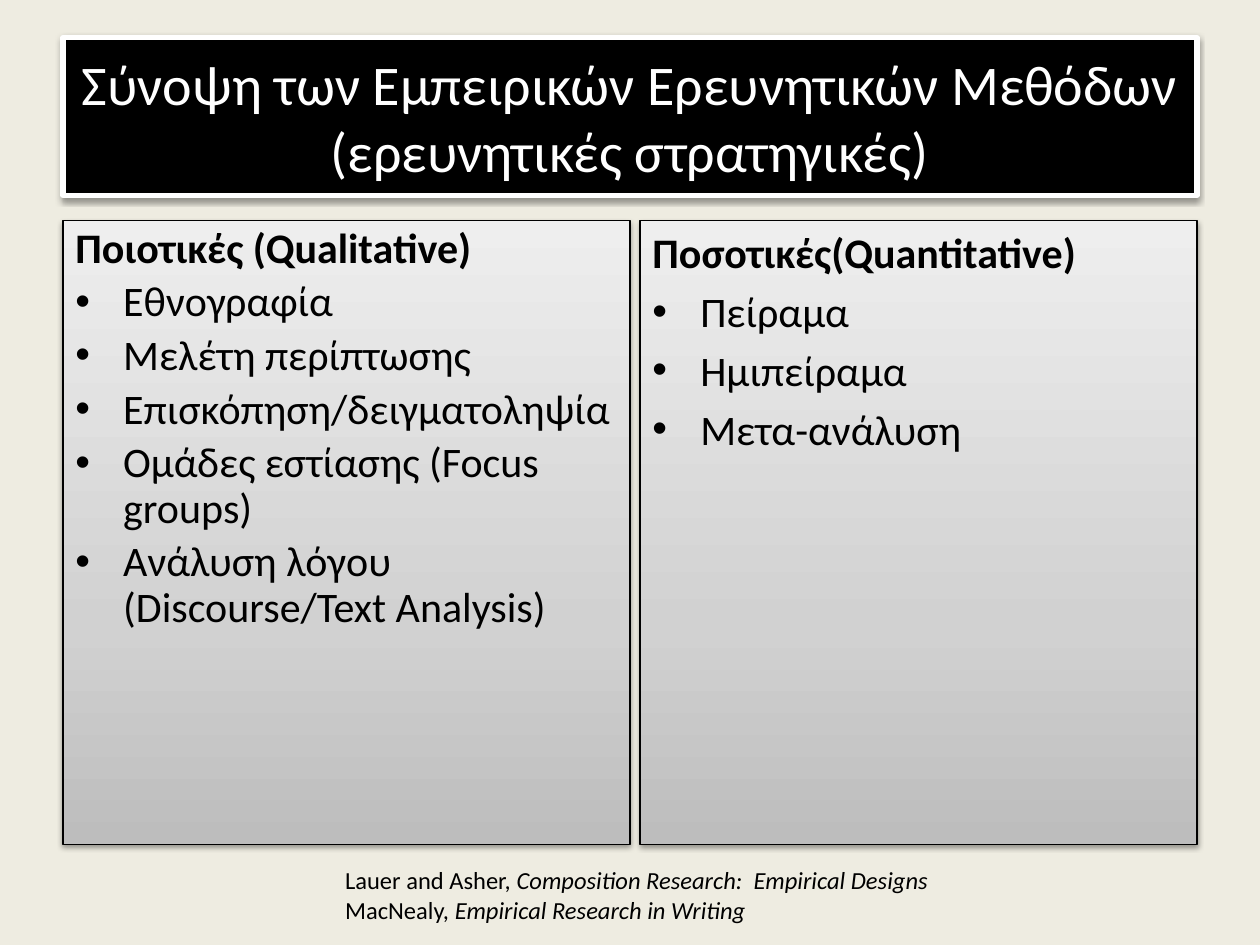
from dataclasses import dataclass
from typing import Optional

from lxml.etree import SubElement
from pptx import Presentation
from pptx.dml.color import RGBColor
from pptx.enum.shapes import MSO_SHAPE
from pptx.enum.text import MSO_ANCHOR as Anchor, MSO_AUTO_SIZE as AutoSize, PP_ALIGN as Align
from pptx.oxml import parse_xml
from pptx.oxml.ns import nsdecls, qn
from pptx.util import Inches, Pt

BLACK = RGBColor(0x00, 0x00, 0x00)
WHITE = RGBColor(0xFF, 0xFF, 0xFF)
CREAM = RGBColor(0xEE, 0xEC, 0xE1)
DARK_GREY = RGBColor(0xBD, 0xBD, 0xBD)
MID_GREY = RGBColor(0xD1, 0xD1, 0xD1)
LIGHT_GREY = RGBColor(0xEE, 0xEE, 0xEE)
PANEL_STOPS = ((0, DARK_GREY), (35, MID_GREY), (100, LIGHT_GREY))

FONT = "Calibri"
MARGIN = 0.5
PANEL_TOP, PANEL_HEIGHT = 1.75, 4.95
HANGING = Inches(0.38)


@dataclass
class Panel:
    left: float
    width: float
    heading: str
    methods: list[str]
    line_spacing: Optional[float] = None


PANELS = [
    Panel(MARGIN, 4.5, "Ποιοτικές (Qualitative)",
          ["Εθνογραφία", "Μελέτη περίπτωσης", "Επισκόπηση/δειγματοληψία",
           "Ομάδες εστίασης (Focus groups)", "Ανάλυση λόγου (Discourse/Text Analysis)"], 0.9),
    Panel(5.08, 4.42, "Ποσοτικές(Quantitative)",
          ["Πείραμα", "Ημιπείραμα", "Μετα-ανάλυση"]),
]
SOURCES = [
    ("Lauer and Asher, ", "Composition Research:  Empirical Designs"),
    ("MacNealy, ", "Empirical Research in Writing"),
]


def style_font(font, size: float, color: RGBColor, bold: bool = False, italic: bool = False) -> None:
    font.name, font.size = FONT, Pt(size)
    font.bold, font.italic = bold, italic
    font.color.rgb = color


def add_shadow(shape) -> None:
    shape.shadow.inherit = False
    effects = shape._element.spPr.find(qn("a:effectLst"))
    shadow = SubElement(effects, qn("a:outerShdw"), blurRad=str(Pt(3.1)), dist=str(Pt(1.6)),
                        dir="5400000", rotWithShape="0")
    color = SubElement(shadow, qn("a:srgbClr"), val=str(BLACK))
    SubElement(color, qn("a:alpha"), val="38000")


def fill_gradient(shape) -> None:
    """Grey gradient running from the bottom edge up."""
    stops = "".join(f'<a:gs pos="{place * 1000}"><a:srgbClr val="{color}"/></a:gs>'
                    for place, color in PANEL_STOPS)
    gradient = parse_xml(f'<a:gradFill {nsdecls("a")} rotWithShape="1"><a:gsLst>{stops}</a:gsLst>'
                         '<a:lin ang="16200000" scaled="0"/></a:gradFill>')
    shape.fill.background()
    properties = shape._element.spPr
    properties.replace(properties.find(qn("a:noFill")), gradient)


def add_box(page, left: float, top: float, width: float, height: float,
            line_color: RGBColor, line_width: float, anchor: Anchor):
    box = page.shapes.add_shape(MSO_SHAPE.RECTANGLE, Inches(left), Inches(top),
                                Inches(width), Inches(height))
    box.line.color.rgb = line_color
    box.line.width = Pt(line_width)
    add_shadow(box)
    box.text_frame.word_wrap = True
    box.text_frame.vertical_anchor = anchor
    return box


def add_bullet(para) -> None:
    properties = para._p.get_or_add_pPr()
    properties.set("marL", str(HANGING))
    properties.set("indent", str(-HANGING))
    SubElement(properties, qn("a:buFont"), typeface="Arial")
    SubElement(properties, qn("a:buChar"), char="•")


def add_panel(page, panel: Panel) -> None:
    box = add_box(page, panel.left, PANEL_TOP, panel.width, PANEL_HEIGHT, BLACK, 0.75, Anchor.TOP)
    fill_gradient(box)
    box.text_frame.text = "\n".join([panel.heading, *panel.methods])
    for index, para in enumerate(box.text_frame.paragraphs):
        if index:
            add_bullet(para)
            para.space_before = Pt(4.8)
        para.alignment = Align.LEFT
        para.line_spacing = panel.line_spacing
        style_font(para.runs[0].font, 24, BLACK, bold=index == 0)


def add_title(page) -> None:
    box = add_box(page, MARGIN, 0.3, 9, 1.25, WHITE, 3, Anchor.MIDDLE)
    box.fill.solid()
    box.fill.fore_color.rgb = BLACK
    para = box.text_frame.paragraphs[0]
    para.text = "Σύνοψη των Εμπειρικών Ερευνητικών Μεθόδων\v(ερευνητικές στρατηγικές)"
    para.alignment = Align.CENTER
    for span in para.runs:
        style_font(span.font, 32, WHITE)


def add_sources(page) -> None:
    box = page.shapes.add_textbox(Inches(2.64), Inches(6.82), Inches(7.01), Inches(0.57))
    frame = box.text_frame
    frame.word_wrap = True
    frame.auto_size = AutoSize.SHAPE_TO_FIT_TEXT
    frame.text = "\n".join(authors for authors, _ in SOURCES)
    for para, (_, work) in zip(frame.paragraphs, SOURCES):
        style_font(para.runs[0].font, 14, BLACK)
        span = para.add_run()
        span.text = work
        style_font(span.font, 14, BLACK, italic=True)


def main() -> None:
    deck = Presentation()
    deck.slide_width, deck.slide_height = Inches(10), Inches(7.5)
    page = deck.slides.add_slide(deck.slide_layouts[6])
    page.background.fill.solid()
    page.background.fill.fore_color.rgb = CREAM

    # Title bar, the two method panels, then the citations
    add_title(page)
    for panel in PANELS:
        add_panel(page, panel)
    add_sources(page)
    deck.save("out.pptx")


if __name__ == "__main__":
    main()
